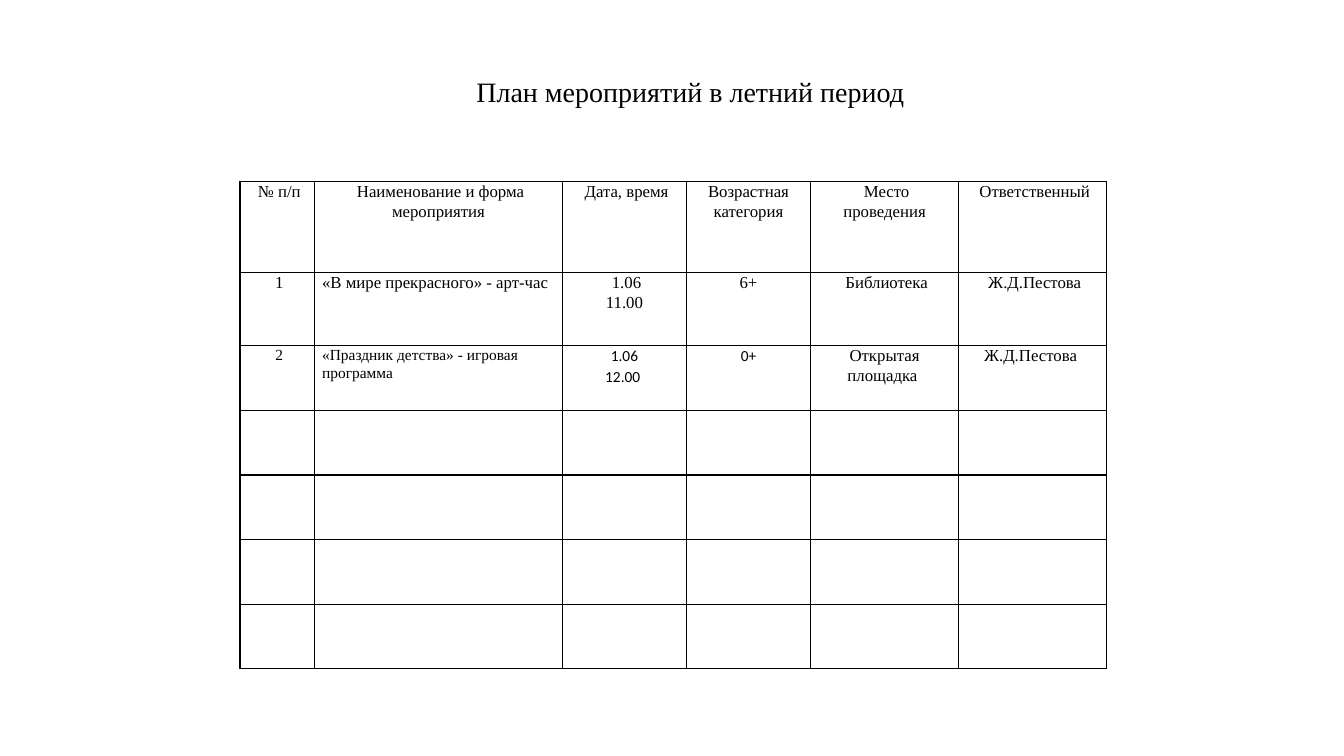
from dataclasses import dataclass

from lxml.etree import SubElement
from pptx import Presentation
from pptx.dml.color import RGBColor
from pptx.enum.text import PP_ALIGN
from pptx.oxml.ns import qn
from pptx.util import Pt


@dataclass(frozen=True)
class Theme:
    ink: str = "000000"
    serif: str = "Times New Roman"
    sans: str = "Calibri"
    title_size: int = 20
    cell_size: int = 12
    small_size: int = 11
    border_width: float = 1
    line_spacing: float = 1.07


THEME = Theme()
COLUMN_WIDTHS = [53.3, 177.1, 88.6, 88.6, 105.8, 105.8]
ROW_HEIGHTS = [65, 52.3] + [46.2] * 5
NAME_COLUMN = 1
CELL_MARGINS = {"margin_left": Pt(5.4), "margin_right": Pt(5.4),
                "margin_top": 0, "margin_bottom": 0}
EVENT_ROWS = [
    [" № п/п", " Наименование и форма мероприятия", " Дата, время",
     "Возрастная категория", " Место проведения", " Ответственный"],
    [" 1", "«В мире прекрасного» - арт-час", " 1.06\n11.00",
     "6+", " Библиотека", " Ж.Д.Пестова"],
    [" 2", "«Праздник детства» - игровая программа", "1.06\n12.00 ",
     "0+", "Открытая площадка ", "Ж.Д.Пестова "],
]
SMALL = (THEME.serif, THEME.small_size)
SMALL_SANS = (THEME.sans, THEME.small_size)
CELL_FONTS = {(2, 0): SMALL, (2, 1): SMALL, (2, 2): SMALL_SANS, (2, 3): SMALL_SANS}


def write_text(text_frame, text, font_name, size, alignment, line_spacing=1.0):
    text_frame.text = text
    for paragraph in text_frame.paragraphs:
        paragraph.alignment = alignment
        paragraph.line_spacing = line_spacing
        for run in paragraph.runs:
            run.font.color.rgb = RGBColor.from_string(THEME.ink)
            for name, value in {"name": font_name, "size": Pt(size)}.items():
                setattr(run.font, name, value)


def add_borders(cell):
    properties = cell._tc.get_or_add_tcPr()
    for side in ("a:lnL", "a:lnR", "a:lnT", "a:lnB"):
        line = SubElement(properties, qn(side), w=str(Pt(THEME.border_width)))
        fill = SubElement(line, qn("a:solidFill"))
        SubElement(fill, qn("a:srgbClr"), val=THEME.ink)


def add_title(slide, left, top, width, height):
    text_box = slide.shapes.add_textbox(Pt(left), Pt(top), Pt(width), Pt(height))
    text_box.text_frame.word_wrap = True
    write_text(text_box.text_frame, "План мероприятий в летний период",
               THEME.serif, THEME.title_size, PP_ALIGN.CENTER)


def add_event_table(slide, left, top):
    """Draw the plan with its upper left corner at the given point."""
    table = slide.shapes.add_table(
        len(ROW_HEIGHTS), len(COLUMN_WIDTHS), Pt(left), Pt(top),
        Pt(sum(COLUMN_WIDTHS)), Pt(sum(ROW_HEIGHTS))).table
    for name in ("first_row", "horz_banding"):
        setattr(table, name, False)
    for column, width in zip(table.columns, COLUMN_WIDTHS):
        column.width = Pt(width)
    for row, height in zip(table.rows, ROW_HEIGHTS):
        row.height = Pt(height)
    for cell in table.iter_cells():
        add_borders(cell)
        cell.fill.background()
        for name, value in CELL_MARGINS.items():
            setattr(cell, name, value)
    for row_index, texts in enumerate(EVENT_ROWS):
        for column_index, text in enumerate(texts):
            font_name, size = CELL_FONTS.get((row_index, column_index),
                                             (THEME.serif, THEME.cell_size))
            is_event_name = row_index > 0 and column_index == NAME_COLUMN
            alignment = PP_ALIGN.LEFT if is_event_name else PP_ALIGN.CENTER
            write_text(table.cell(row_index, column_index).text_frame, text,
                       font_name, size, alignment, THEME.line_spacing)


def main():
    presentation = Presentation()
    presentation.slide_width, presentation.slide_height = Pt(960), Pt(540)
    slide = presentation.slides.add_slide(presentation.slide_layouts[6])
    add_title(slide, left=93.6, top=49.7, width=799.2, height=370.8)
    add_event_table(slide, left=171.4, top=129.6)
    presentation.save("out.pptx")


if __name__ == "__main__":
    main()
